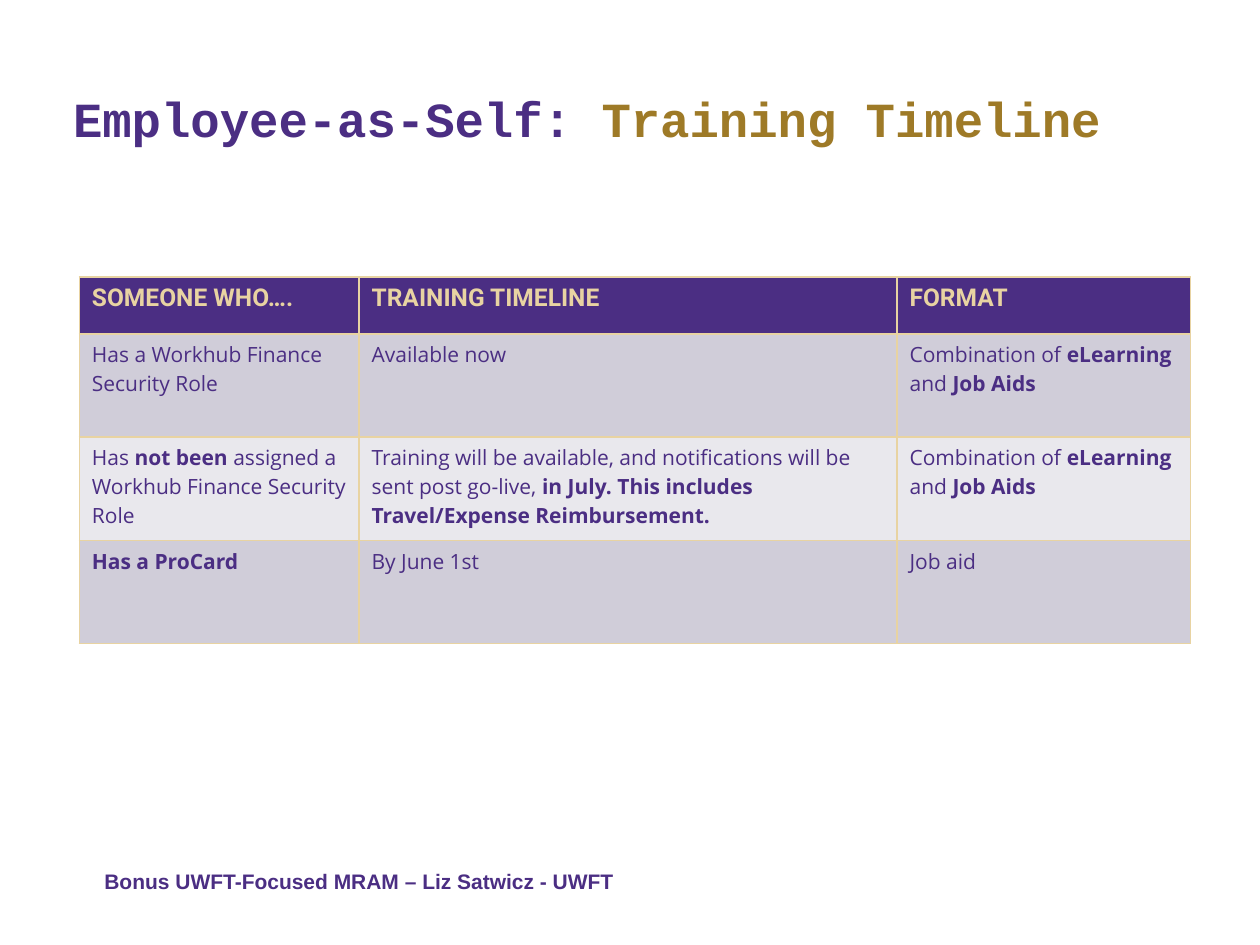
import pptx
import pptx.util
import pptx.dml.color
import pptx.enum.text
import pptx.oxml
import pptx.oxml.ns

Inches = pptx.util.Inches
Pt = pptx.util.Pt
RGBColor = pptx.dml.color.RGBColor
ANCHOR = pptx.enum.text.MSO_ANCHOR
ALIGN = pptx.enum.text.PP_ALIGN

PURPLE = RGBColor(0x4B, 0x2E, 0x83)
GOLD = RGBColor(0x9E, 0x7A, 0x27)
SAND = RGBColor(0xE8, 0xD3, 0xA2)
BAND_DARK = RGBColor(0xD0, 0xCD, 0xD9)
BAND_LIGHT = RGBColor(0xE9, 0xE8, 0xED)

TITLE_FORMAT = {"name": "Courier New", "size": Pt(28), "bold": True}
HEADER_FORMAT = {"name": "Roboto", "size": Pt(14), "color": SAND}
BODY_FORMAT = {"name": "Open Sans", "size": Pt(12), "color": PURPLE}
FOOTER_FORMAT = {"name": "Arial", "size": Pt(12), "bold": True, "color": PURPLE}

COLUMN_WIDTHS = (2.22, 4.27, 2.33)
HEADER_HEIGHT = 0.45
BODY_HEIGHT = 0.82

HEADINGS = ("SOMEONE WHO….", "TRAINING TIMELINE", "FORMAT")
COMBINATION = (
    ("Combination of ", False), ("eLearning", True),
    (" and ", False), ("Job Aids", True),
)
AUDIENCES = (
    (
        (("Has a Workhub Finance Security Role", False),),
        (("Available now", False),),
        COMBINATION,
    ),
    (
        (("Has ", False), ("not been ", True),
         ("assigned a Workhub Finance Security Role", False)),
        (("Training will be available, and notifications will be sent "
          "post go-live, ", False),
         ("in July. This includes Travel/Expense Reimbursement.", True)),
        COMBINATION,
    ),
    (
        (("Has a ProCard", True),),
        (("By June 1st", False),),
        (("Job aid", False),),
    ),
)


def add_run(paragraph, text, text_format, **changes):
    """Append a run and set its font from the format values."""
    run = paragraph.add_run()
    run.text = text
    for attribute, value in {**text_format, **changes}.items():
        if attribute == "color":
            run.font.color.rgb = value
        else:
            setattr(run.font, attribute, value)


def set_borders(cell, color, points):
    """Draw the same solid line on all four sides of a cell."""
    properties = cell._tc.get_or_add_tcPr()
    for side in ("lnL", "lnR", "lnT", "lnB"):
        properties.append(pptx.oxml.parse_xml(
            f'<a:{side} {pptx.oxml.ns.nsdecls("a")} w="{Pt(points)}">'
            f'<a:solidFill><a:srgbClr val="{color}"/></a:solidFill></a:{side}>'
        ))


def place_title(slide, left, top, width, height):
    """Place the two-colour title in the given box."""
    title = slide.shapes.title
    title.left, title.top, title.width, title.height = left, top, width, height
    frame = title.text_frame
    frame.auto_size = pptx.enum.text.MSO_AUTO_SIZE.NONE
    frame.vertical_anchor = ANCHOR.BOTTOM
    heading = frame.paragraphs[0]
    heading.alignment = ALIGN.LEFT
    add_run(heading, "Employee-as-Self: ", TITLE_FORMAT, color=PURPLE)
    add_run(heading, "Training Timeline", TITLE_FORMAT, color=GOLD)


def fill_cell(cell, runs, text_format, background):
    """Write a cell's runs and set its borders and fill."""
    set_borders(cell, SAND, 1)
    cell.fill.solid()
    cell.fill.fore_color.rgb = background
    for text, bold in runs:
        add_run(cell.text_frame.paragraphs[0], text, text_format, bold=bold)


def place_timeline(slide, left, top, width, height):
    """Place the training timeline table in the given box."""
    timeline = slide.shapes.add_table(
        len(AUDIENCES) + 1, len(HEADINGS), left, top, width, height).table
    for column, column_width in zip(timeline.columns, COLUMN_WIDTHS):
        column.width = Inches(column_width)
    for index, row in enumerate(timeline.rows):
        row.height = Inches(BODY_HEIGHT if index else HEADER_HEIGHT)
    for column, heading in enumerate(HEADINGS):
        fill_cell(timeline.cell(0, column), ((heading, True),), HEADER_FORMAT, PURPLE)
    for row, audience in enumerate(AUDIENCES, start=1):
        band = BAND_DARK if row % 2 else BAND_LIGHT
        for column, runs in enumerate(audience):
            fill_cell(timeline.cell(row, column), runs, BODY_FORMAT, band)


def place_footer(slide, left, top, width, height):
    """Place the presenter line in the given box."""
    frame = slide.shapes.add_textbox(left, top, width, height).text_frame
    frame.word_wrap = True
    frame.vertical_anchor = ANCHOR.BOTTOM
    presenter = frame.paragraphs[0]
    presenter.line_spacing = 1.5
    add_run(presenter, "Bonus UWFT-Focused MRAM – Liz Satwicz - UWFT", FOOTER_FORMAT)


def main():
    """Build the slide and save it."""
    deck = pptx.Presentation()
    deck.slide_width, deck.slide_height = Inches(10), Inches(7.5)
    slide = deck.slides.add_slide(deck.slide_layouts.get_by_name("Title Only"))
    place_title(slide, Inches(0.48), Inches(0.59), Inches(8.94), Inches(0.63))
    place_timeline(slide, Inches(0.63), Inches(2.2), Inches(sum(COLUMN_WIDTHS)),
                   Inches(HEADER_HEIGHT + BODY_HEIGHT * len(AUDIENCES)))
    place_footer(slide, Inches(0.73), Inches(6.78), Inches(7.91), Inches(0.36))
    deck.save("out.pptx")


if __name__ == "__main__":
    main()
